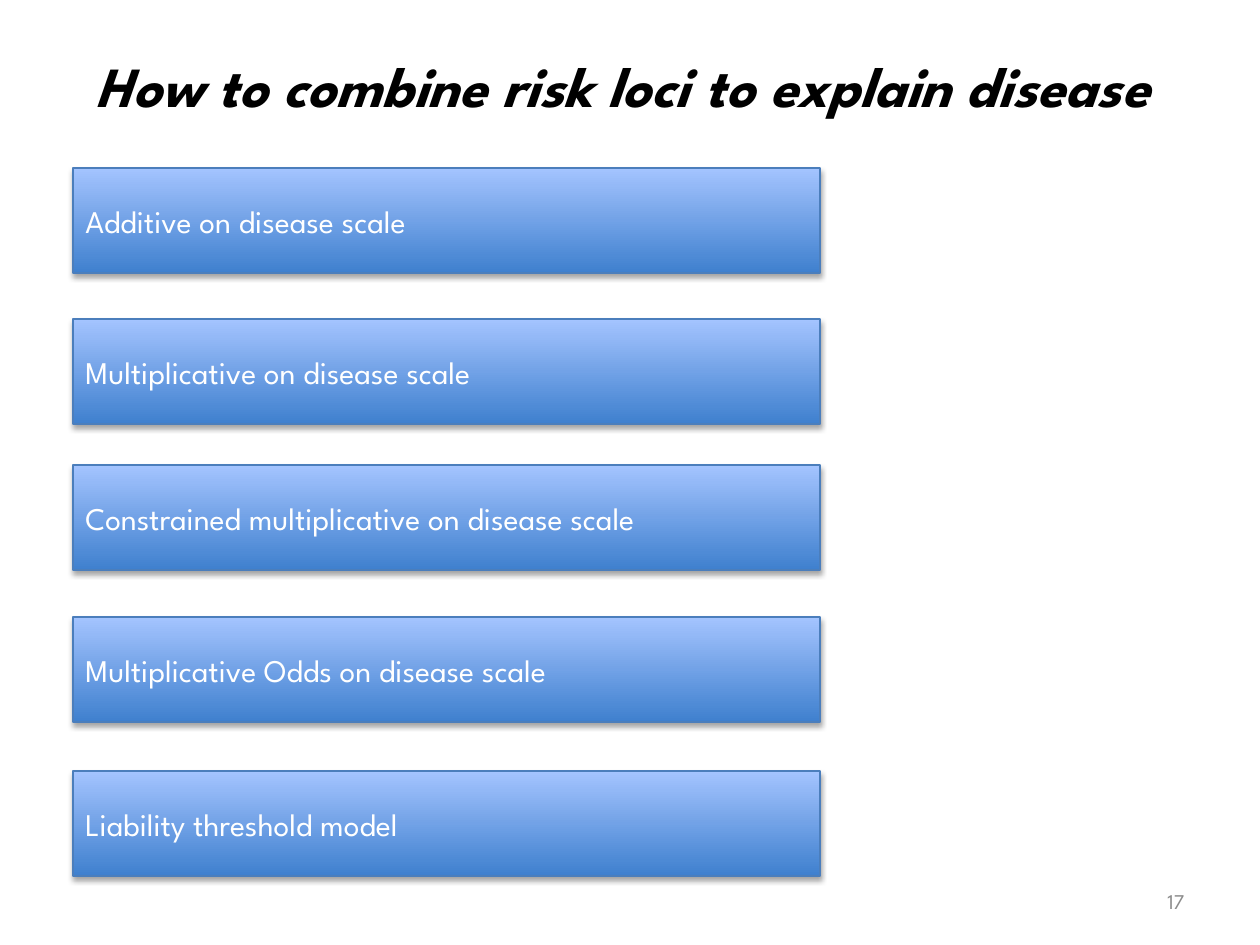
from lxml.etree import SubElement
from pptx import Presentation
from pptx.dml.color import RGBColor
from pptx.enum.shapes import MSO_SHAPE
from pptx.enum.text import MSO_ANCHOR, MSO_AUTO_SIZE, PP_ALIGN
from pptx.oxml.ns import qn
from pptx.util import Emu, Pt

BLACK = RGBColor(0x00, 0x00, 0x00)
WHITE = RGBColor(0xFF, 0xFF, 0xFF)
GREY = RGBColor(0x8C, 0x8C, 0x8C)
DEEP = RGBColor(0x3F, 0x80, 0xCE)
PALE = RGBColor(0xA4, 0xC4, 0xFF)
EDGE = RGBColor(0x4B, 0x7E, 0xBC)
FONT = "League Spartan"
SCALE = 914400 / 126


def px(size):
    return Emu(round(size * SCALE))


class Deck:
    def __init__(self, wide, high):
        self.show = Presentation()
        self.show.slide_width = px(wide)
        self.show.slide_height = px(high)
        self.slide = self.show.slides.add_slide(self.show.slide_layouts[5])

    def words(self, shape, text, size, color, align, bold=False, slant=False):
        frame = shape.text_frame
        frame.word_wrap = True
        frame.auto_size = MSO_AUTO_SIZE.NONE
        frame.vertical_anchor = MSO_ANCHOR.MIDDLE
        line = frame.paragraphs[0]
        line.alignment = align
        run = line.add_run()
        run.text = text
        font = run.font
        font.name = FONT
        font.size = Pt(size)
        font.bold = bold
        font.italic = slant
        font.color.rgb = color

    def title(self, text, *area):
        head = self.slide.shapes.title
        head.left, head.top, head.width, head.height = map(px, area)
        self.words(head, text, 32.4, BLACK, PP_ALIGN.CENTER, True, True)

    def label(self, text, *area):
        box = self.slide.shapes.add_textbox(*map(px, area))
        self.words(box, text, 12, GREY, PP_ALIGN.RIGHT)

    def bar(self, text, *area):
        box = self.slide.shapes.add_shape(MSO_SHAPE.RECTANGLE, *map(px, area))
        box.fill.gradient()
        box.fill.gradient_angle = 90
        for stop, color in zip(box.fill.gradient_stops, (DEEP, PALE)):
            stop.color.rgb = color
        box.line.color.rgb = EDGE
        box.line.width = Pt(0.75)
        self.shade(box)
        self.words(box, text, 18, WHITE, PP_ALIGN.LEFT)

    def shade(self, box):
        box.shadow.inherit = False
        group = box.element.spPr.find(qn("a:effectLst"))
        cast = SubElement(group, qn("a:outerShdw"), blurRad=str(Pt(3.1)),
                          dist=str(Pt(1.8)), dir="5400000", rotWithShape="0")
        color = SubElement(cast, qn("a:srgbClr"), val=str(BLACK))
        SubElement(color, qn("a:alpha"), val="35000")


def main():
    deck = Deck(1260, 945)
    deck.title("How to combine risk loci to explain disease", 0, 38, 1246, 94)
    deck.label("17", 903, 876, 294, 50)
    models = (
        ("Additive on disease scale", 168),
        ("Multiplicative on disease scale", 319),
        ("Constrained multiplicative on disease scale", 465),
        ("Multiplicative Odds on disease scale", 617),
        ("Liability threshold model", 771),
    )
    for text, top in models:
        deck.bar(text, 73, top, 747, 105)
    deck.show.save("out.pptx")


if __name__ == "__main__":
    main()
